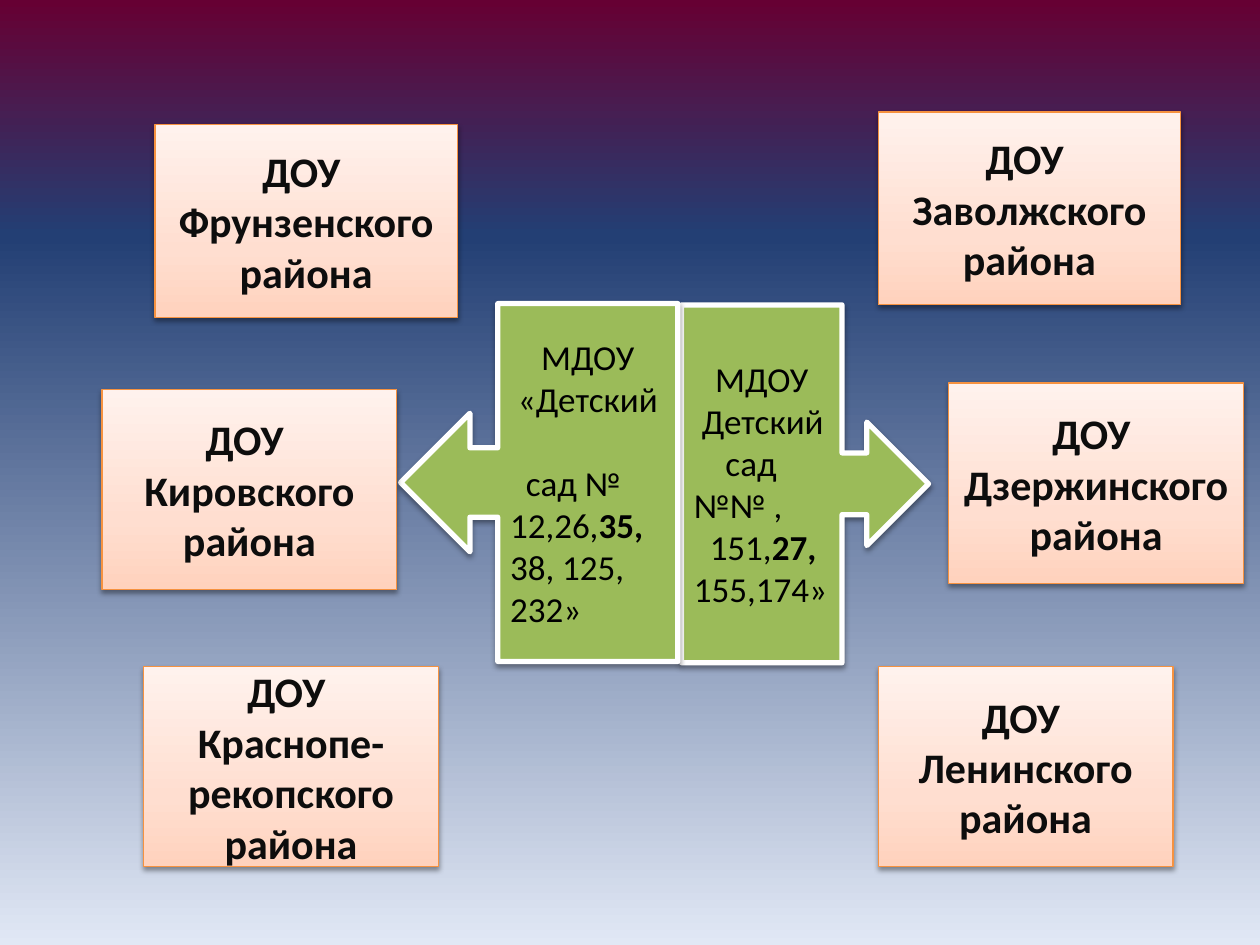
from dataclasses import dataclass

from lxml.etree import SubElement
from pptx import Presentation
from pptx.dml.color import RGBColor
from pptx.enum.shapes import MSO_SHAPE
from pptx.enum.text import MSO_ANCHOR, PP_ALIGN
from pptx.oxml.ns import qn
from pptx.util import Emu, Inches, Pt

SLIDE_W, SLIDE_H = Inches(10), Inches(7.5)
SPACE_WIDTH = Pt(4.5)
FONT = "Calibri"
SKY = [(0, "660033"), (25, "233F74"), (100, "E1E8F5")]
PEACH = [(0, "FFD2BD"), (35, "FFDED0"), (100, "FFF2ED")]


@dataclass(frozen=True)
class Place:
    """Left, top, width and height in percent of the slide."""
    left: float
    top: float
    width: float
    height: float


@dataclass(frozen=True)
class Line:
    """One paragraph; the indent is counted in spaces."""
    text: str
    bold_tail: str = ""
    indent: int = 0
    centred: bool = False
    gap: float = 0


@dataclass(frozen=True)
class District:
    place: Place
    lines: tuple[str, ...]


@dataclass(frozen=True)
class Kindergartens:
    place: Place
    arrow: MSO_SHAPE
    lines: tuple[Line, ...]


KINDERGARTENS = [
    Kindergartens(Place(54.1, 32.27, 19.6, 37.87), MSO_SHAPE.RIGHT_ARROW_CALLOUT, (
        Line("МДОУ", centred=True),
        Line("Детский", indent=1),
        Line("сад", indent=4),
        Line("№№ ,"),
        Line("151,", "27,", indent=2),
        Line("155,174»"),
    )),
    Kindergartens(Place(31.8, 32.13, 22, 37.87), MSO_SHAPE.LEFT_ARROW_CALLOUT, (
        Line("МДОУ", centred=True),
        Line("«Детский", indent=1),
        Line("сад № 12,26,", "35,", indent=2, gap=24),
        Line("38, 125, 232»"),
    )),
]

DISTRICTS = [
    District(Place(12.3, 13.2, 24, 20.4), ("Фрунзенского района",)),
    District(Place(8.1, 41.2, 23.4, 21.2), ("Кировского", "района")),
    District(Place(69.7, 11.87, 24, 20.4), ("Заволжского района",)),
    District(Place(75.3, 40.53, 23.4, 21.2), ("Дзержинского", "района")),
    District(Place(11.4, 70.53, 23.4, 21.2), ("Краснопе-рекопского", "района")),
    District(Place(69.7, 70.53, 23.4, 21.2), ("Ленинского", "района")),
]


def colour(hex_code: str) -> RGBColor:
    return RGBColor.from_string(hex_code)


def fill_gradient(owner, fill, stops, angle: int) -> None:
    """Set gradient stops given in percent; the angle runs counter-clockwise."""
    fill.gradient()
    fill.gradient_angle = angle
    stop_list = owner.xpath(".//a:gsLst")[0]
    for old_stop in list(stop_list):
        stop_list.remove(old_stop)
    for percent, hex_code in stops:
        stop = SubElement(stop_list, qn("a:gs"), pos=str(percent * 1000))
        SubElement(stop, qn("a:srgbClr"), val=hex_code)


def add_shadow(shape) -> None:
    shape.shadow.inherit = False
    effects = shape._element.spPr.find(qn("a:effectLst"))
    shadow = SubElement(effects, qn("a:outerShdw"), blurRad=str(Pt(3.1)),
                        dist=str(Pt(1.6)), dir="5400000", rotWithShape="0")
    black = SubElement(shadow, qn("a:srgbClr"), val="000000")
    SubElement(black, qn("a:alpha"), val="38000")


def add_block(slide, kind: MSO_SHAPE, place: Place, outline: str, weight: float):
    shape = slide.shapes.add_shape(
        kind,
        Emu(round(SLIDE_W * place.left / 100)), Emu(round(SLIDE_H * place.top / 100)),
        Emu(round(SLIDE_W * place.width / 100)), Emu(round(SLIDE_H * place.height / 100)))
    shape.line.color.rgb = colour(outline)
    shape.line.width = Pt(weight)
    add_shadow(shape)
    return shape


def write(shape, lines, *, size: float, ink: str, bold: bool = False) -> None:
    frame = shape.text_frame
    frame.word_wrap = True
    frame.vertical_anchor = MSO_ANCHOR.MIDDLE
    for number, line in enumerate(lines):
        paragraph = frame.add_paragraph() if number else frame.paragraphs[0]
        paragraph.alignment = PP_ALIGN.CENTER if line.centred else PP_ALIGN.LEFT
        if line.gap:
            paragraph.space_before = Pt(line.gap)
        if line.indent:
            properties = paragraph._p.get_or_add_pPr()
            properties.set("marL", "0")
            properties.set("indent", str(line.indent * SPACE_WIDTH))
        for text, heavy in ((line.text, bold), (line.bold_tail, True)):
            if text:
                run = paragraph.add_run()
                run.text = text
                run.font.name = FONT
                run.font.size = Pt(size)
                run.font.bold = heavy
                run.font.color.rgb = colour(ink)


def add_kindergartens(slide, group: Kindergartens) -> None:
    callout = add_block(slide, group.arrow, group.place, "FFFFFF", 3)
    callout.fill.solid()
    callout.fill.fore_color.rgb = colour("9BBB59")
    write(callout, group.lines, size=20, ink="000000")


def add_district(slide, district: District) -> None:
    card = add_block(slide, MSO_SHAPE.RECTANGLE, district.place, "F69240", 0.75)
    fill_gradient(card._element, card.fill, PEACH, 90)
    frame = card.text_frame
    frame.margin_left = frame.margin_right = Inches(0.12)
    frame.margin_top = frame.margin_bottom = Inches(0.12)
    lines = [Line(text, centred=True) for text in ("ДОУ ", *district.lines)]
    write(card, lines, size=24, ink="0D0D0D", bold=True)


def main() -> None:
    deck = Presentation()
    deck.slide_width, deck.slide_height = SLIDE_W, SLIDE_H
    slide = deck.slides.add_slide(deck.slide_layouts[6])
    fill_gradient(slide._element, slide.background.fill, SKY, 270)
    for group in KINDERGARTENS:
        add_kindergartens(slide, group)
    for district in DISTRICTS:
        add_district(slide, district)
    deck.save("out.pptx")


if __name__ == "__main__":
    main()
